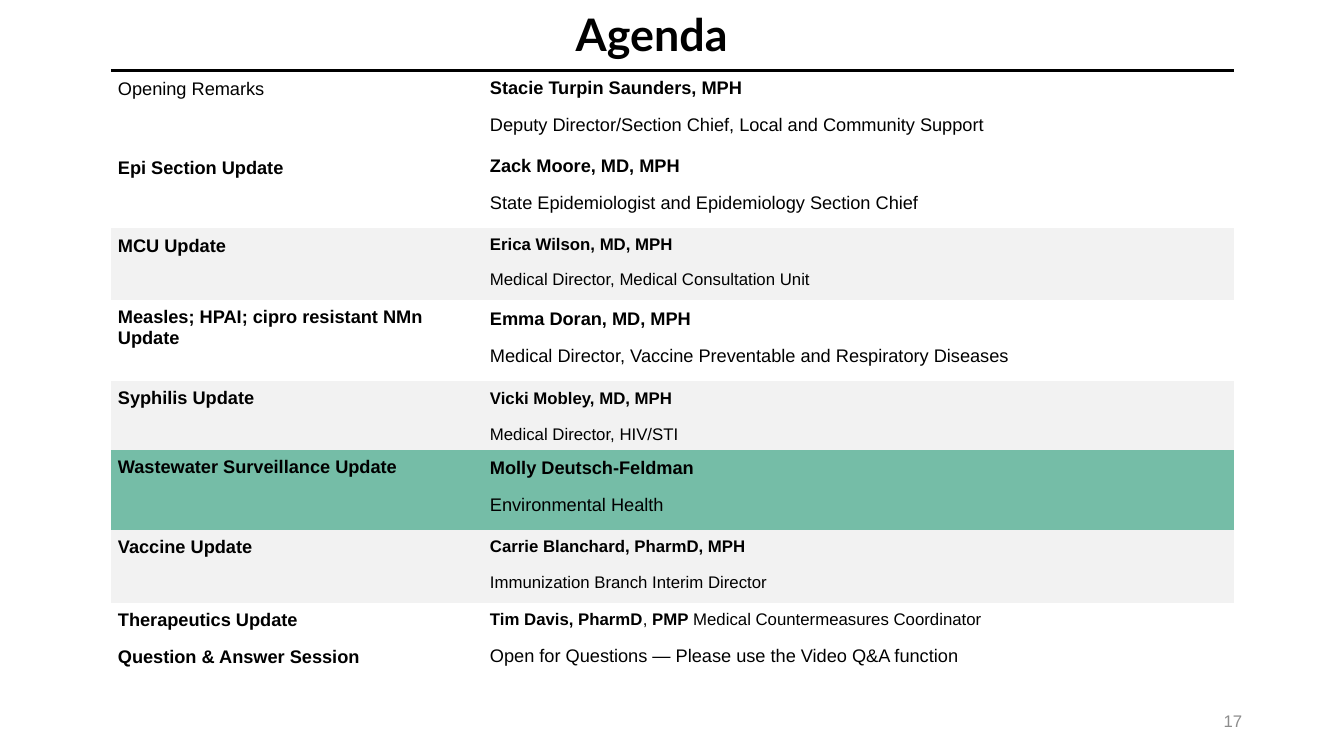
from lxml.etree import SubElement
from pptx import Presentation
from pptx.dml.color import RGBColor
from pptx.enum.text import MSO_ANCHOR, MSO_AUTO_SIZE, PP_ALIGN
from pptx.oxml.ns import qn
from pptx.util import Inches, Pt

BLACK = RGBColor(0, 0, 0)
GRAY = RGBColor(0x8C, 0x8C, 0x8C)
PALE = RGBColor(0xF2, 0xF2, 0xF2)
GREEN = RGBColor(0x75, 0xBD, 0xA7)
PLAIN = "{2D5ABB26-0587-4C30-8999-92F81FD0307C}"

# topic, speaker lines, speaker size, row height, fill, topic spacing, speaker spacing
AGENDA = [
    ("Opening Remarks", [("Stacie Turpin Saunders, MPH", True),
     ("Deputy Director/Section Chief, Local and Community Support", False)],
     13, 0.78, None, 1.07, 1),
    ("Epi Section Update", [("Zack Moore, MD, MPH", True),
     ("State Epidemiologist and Epidemiology Section Chief", False)],
     13, 0.78, None, 1.07, 1),
    ("MCU Update", [("Erica Wilson, MD, MPH", True),
     ("Medical Director, Medical Consultation Unit", False)],
     12, 0.72, PALE, 1.07, 1),
    ("Measles; HPAI; cipro resistant NMn Update", [("Emma Doran, MD, MPH", True),
     ("Medical Director, Vaccine Preventable and Respiratory Diseases", False)],
     13, 0.8, None, 1, 1.07),
    ("Syphilis Update", [("Vicki Mobley, MD, MPH", True),
     ("Medical Director, HIV/STI", False)],
     12, 0.68, PALE, 1, 1.07),
    ("Wastewater Surveillance Update", [("Molly Deutsch-Feldman", True),
     ("Environmental Health", False)],
     13, 0.8, GREEN, 1, 1.07),
    ("Vaccine Update", [("Carrie Blanchard, PharmD, MPH", True),
     ("Immunization Branch Interim Director", False)],
     12, 0.72, PALE, 1, 1),
    ("Therapeutics Update", [([("Tim Davis, PharmD", True), (", ", False),
     ("PMP", True), (" Medical Countermeasures Coordinator", False)], None)],
     12, 0.36, None, 1, 1),
    ("Question & Answer Session",
     [("Open for Questions — Please use the Video Q&A function", False)],
     13, 0.4, None, 1.07, 1),
]
COLS = (3.69, 7.45)


def style(para, size, color, face="Arial", bold=None):
    font = para.font
    font.name, font.size, font.bold = face, Pt(size), bold
    font.color.rgb = color


def write(cell, lines, size, space):
    cell.margin_left = cell.margin_right = cell.margin_top = Inches(0.07)
    cell.margin_bottom = Inches(0.03)
    frame = cell.text_frame
    for i, (text, bold) in enumerate(lines):
        para = frame.add_paragraph() if i else frame.paragraphs[0]
        if i:
            para.space_before = Pt(6)
        para.space_after = Pt(6)
        para.line_spacing = 1 if i else space
        style(para, size, BLACK, bold=bold)
        if isinstance(text, str):
            para.add_run().text = text
        else:
            for part, heavy in text:
                run = para.add_run()
                run.text, run.font.bold = part, heavy


def rule(cell):
    line = SubElement(cell._tc.get_or_add_tcPr(), qn("a:lnT"), w=str(Pt(2.25)))
    fill = SubElement(line, qn("a:solidFill"))
    SubElement(fill, qn("a:srgbClr"), val=str(BLACK))


def paint(cell, color):
    if color:
        cell.fill.solid()
        cell.fill.fore_color.rgb = color
    else:
        cell.fill.background()


def main():
    deck = Presentation()
    deck.slide_width, deck.slide_height = Inches(13.33), Inches(7.5)
    slide = deck.slides.add_slide(deck.slide_layouts[5])

    title = slide.shapes.title
    title.left, title.top = Inches(5.61), Inches(0.02)
    title.width, title.height = Inches(4.84), Inches(0.64)
    title.text = "Agenda"
    frame = title.text_frame
    frame.vertical_anchor = MSO_ANCHOR.TOP
    frame.auto_size = MSO_AUTO_SIZE.SHAPE_TO_FIT_TEXT
    frame.paragraphs[0].alignment = PP_ALIGN.LEFT
    style(frame.paragraphs[0], 32, BLACK, "Lato", True)

    high = sum(row[3] for row in AGENDA)
    table = slide.shapes.add_table(
        len(AGENDA), len(COLS), Inches(1.1), Inches(0.7),
        Inches(sum(COLS)), Inches(high)).table
    table.first_row = table.horz_banding = False
    table._tbl.tblPr.find(qn("a:tableStyleId")).text = PLAIN
    for col, wide in zip(table.columns, COLS):
        col.width = Inches(wide)
    for i, (topic, lines, size, tall, color, lead, space) in enumerate(AGENDA):
        table.rows[i].height = Inches(tall)
        left, right = table.cell(i, 0), table.cell(i, 1)
        write(left, [(topic, i > 0)], 13, lead)
        write(right, lines, size, space)
        for cell in (left, right):
            if i == 0:
                rule(cell)
            paint(cell, color)

    box = slide.shapes.add_textbox(
        Inches(9.42), Inches(6.95), Inches(3), Inches(0.4))
    frame = box.text_frame
    frame.word_wrap = True
    frame.vertical_anchor = MSO_ANCHOR.MIDDLE
    para = frame.paragraphs[0]
    para.text = "17"
    para.alignment = PP_ALIGN.RIGHT
    para.space_after = Pt(6)
    style(para, 12, GRAY)

    deck.save("out.pptx")


if __name__ == "__main__":
    main()
